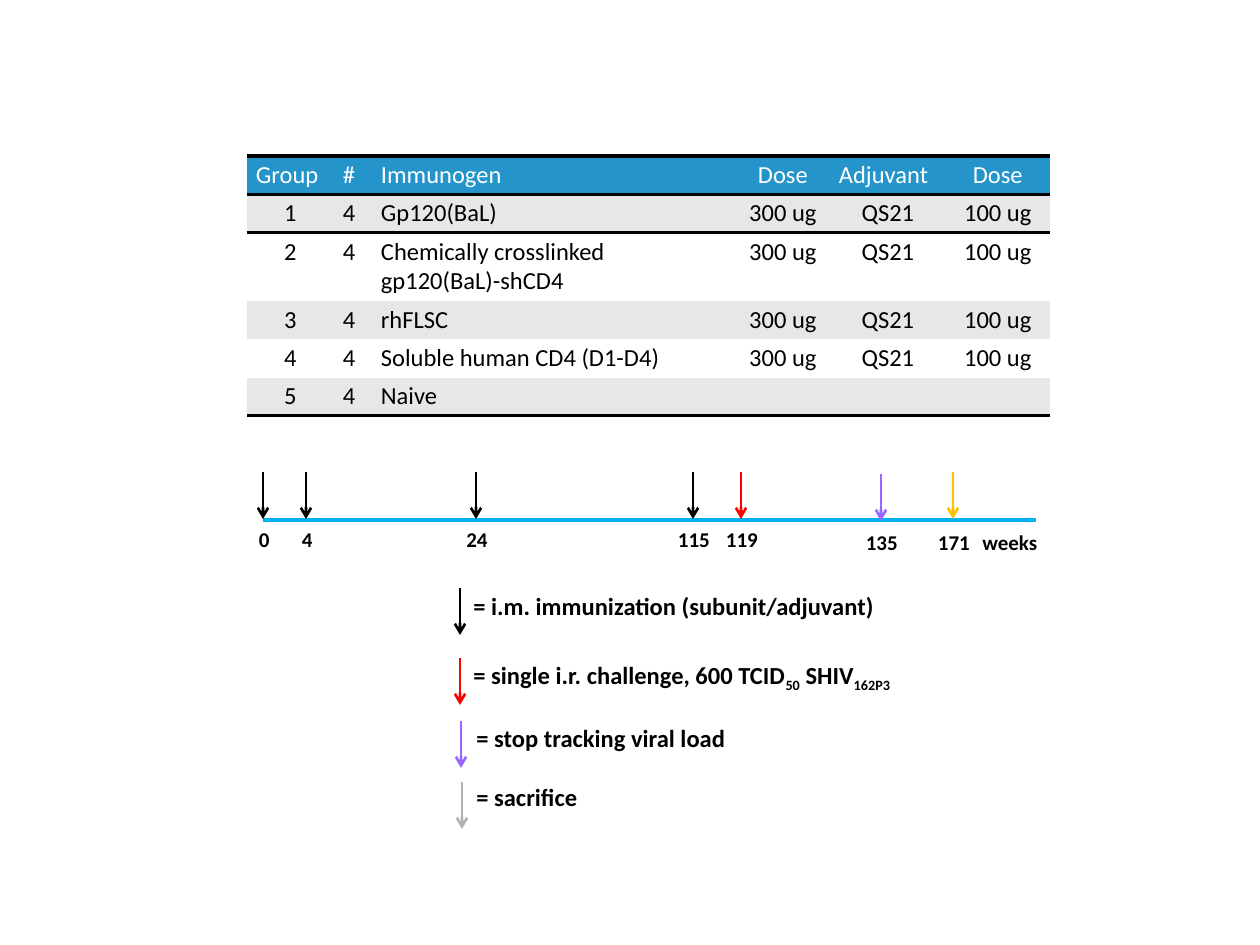
"""Build a slide with a study group table, an immunization timeline and its legend."""
import lxml.etree
import pptx
import pptx.dml.color
import pptx.enum.shapes
import pptx.enum.text
import pptx.oxml.ns
import pptx.util

COLORS = {
    "black": "000000", "white": "FFFFFF", "header": "2494CA", "band": "E7E7E7",
    "axis": "00B0F0", "red": "FF0000", "purple": "9966FF", "gold": "FFC000", "gray": "B2B2B2",
}
FONT = "Calibri"
SLIDE_SIZE = (1260, 945)

TABLE_ROWS = [
    ("Group", "#", "Immunogen", "Dose", "Adjuvant", "Dose"),
    ("1", "4", "Gp120(BaL)", "300 ug", "QS21", "100 ug"),
    ("2", "4", "Chemically crosslinked gp120(BaL)-shCD4", "300 ug", "QS21", "100 ug"),
    ("3", "4", "rhFLSC", "300 ug", "QS21", "100 ug"),
    ("4", "4", "Soluble human CD4 (D1-D4)", "300 ug", "QS21", "100 ug"),
    ("5", "4", "Naive", "", "", ""),
]
TABLE_ORIGIN = (247, 156)
COLUMN_WIDTHS = [87, 38, 364, 94, 116, 104]
ROW_HEIGHTS = [38, 38, 68, 38, 38, 38]
HEADER_ALIGNMENT, BODY_ALIGNMENT = "lllclc", "cllccc"
CELL_MARGINS = {"margin_left": 9, "margin_right": 9, "margin_top": 4, "margin_bottom": 5}

AXIS = (263, 1036, 520)
ARROW_LENGTH = 47
EVENTS = [
    ("0", 263, 472, 520, "black"),
    ("4", 306, 472, 520, "black"),
    ("24", 476, 472, 520, "black"),
    ("115", 693, 472, 520, "black"),
    ("119", 741, 472, 520, "red"),
    ("135", 881, 474, 523, "purple"),
    ("171", 953, 472, 523, "gold"),
]
UNIT_LABEL = ("weeks", 970, 523, 81)
LEGEND = [
    (["= i.m. immunization (subunit/adjuvant)"], "black", 460, 588, 461, 585, 442),
    (["= single i.r. challenge, 600 TCID", "50", " SHIV", "162P3"], "red", 460, 658, 461, 654, 454),
    (["= stop tracking viral load"], "purple", 461, 721, 464, 717, 276),
    (["= sacrifice"], "gray", 462, 782, 464, 776, 127),
]


def px(length):
    return pptx.util.Emu(round(length * 914400 / 126))


def rgb(name):
    return pptx.dml.color.RGBColor.from_string(COLORS[name])


def set_attributes(target, values):
    for name, value in values.items():
        setattr(target, name, value)


def add_element(parent, tag, **attributes):
    return lxml.etree.SubElement(parent, pptx.oxml.ns.qn(tag), attributes)


def format_run(run, size, color, bold):
    set_attributes(run.font, {"name": FONT, "size": pptx.util.Pt(size), "bold": bold})
    run.font.color.rgb = rgb(color)


def add_line(shapes, start, end, color, width, arrow=False):
    connector = shapes.add_connector(
        pptx.enum.shapes.MSO_CONNECTOR.STRAIGHT, *map(px, start + end))
    connector.line.color.rgb = rgb(color)
    connector.line.width = pptx.util.Pt(width)
    if arrow:
        add_element(connector.line._get_or_add_ln(), "a:tailEnd", type="arrow")
    add_element(connector._element.spPr, "a:effectLst")


def add_arrow(shapes, x, top, color):
    add_line(shapes, (x, top), (x, top + ARROW_LENGTH), color, 1.5, True)


def add_label(shapes, parts, left, top, width, height, size):
    shape = shapes.add_textbox(*map(px, (left, top, width, height)))
    set_attributes(shape.text_frame, {
        "word_wrap": False,
        "auto_size": pptx.enum.text.MSO_AUTO_SIZE.SHAPE_TO_FIT_TEXT,
    })
    for index, part in enumerate(parts):
        run = shape.text_frame.paragraphs[0].add_run()
        run.text = part
        format_run(run, size, "black", True)
        if index % 2:
            run.font._element.set("baseline", "-25000")


def add_borders(cell, sides):
    properties = cell._tc.get_or_add_tcPr()
    for index, side in enumerate(sides):
        border = add_element(properties, "a:ln" + side, w="25400")
        fill = add_element(border, "a:solidFill")
        add_element(fill, "a:srgbClr", val=COLORS["black"])
        properties.insert(index, border)


def format_cell(cell, text, row, alignment):
    set_attributes(cell, {name: px(value) for name, value in CELL_MARGINS.items()})
    cell.fill.solid()
    cell.fill.fore_color.rgb = rgb("header" if row == 0 else "band" if row % 2 else "white")
    paragraph = cell.text_frame.paragraphs[0]
    align = pptx.enum.text.PP_ALIGN
    paragraph.alignment = align.CENTER if alignment == "c" else align.LEFT
    if text:
        run = paragraph.add_run()
        run.text = text
        format_run(run, 14, "black" if row else "white", False)
    else:
        add_element(paragraph._p, "a:endParaRPr", sz="1400")
    add_borders(cell, {0: "TB", 1: "T", len(TABLE_ROWS) - 1: "B"}.get(row, ""))


def add_group_table(slide):
    size = (sum(COLUMN_WIDTHS), sum(ROW_HEIGHTS))
    table = slide.shapes.add_table(
        len(TABLE_ROWS), len(COLUMN_WIDTHS), *map(px, TABLE_ORIGIN + size)).table
    set_attributes(table, {"first_row": False, "horz_banding": False})
    style = table._tbl.tblPr.find(pptx.oxml.ns.qn("a:tableStyleId"))
    style.text = "{2D5ABB26-0587-4C30-8999-92F81FD0307C}"
    for column, width in zip(table.columns, COLUMN_WIDTHS):
        column.width = px(width)
    for row, texts in enumerate(TABLE_ROWS):
        table.rows[row].height = px(ROW_HEIGHTS[row])
        alignments = BODY_ALIGNMENT if row else HEADER_ALIGNMENT
        for column, (text, alignment) in enumerate(zip(texts, alignments)):
            format_cell(table.cell(row, column), text, row, alignment)


def add_timeline(shapes):
    left, right, y = AXIS
    add_line(shapes, (left, y), (right, y), "axis", 2.5)
    for week, x, top, label_top, color in EVENTS:
        add_arrow(shapes, x, top, color)
        width = 26 + 11 * len(week)
        add_label(shapes, [week], x + 2 - width / 2, label_top, width, 38, 12)
    text, left, top, width = UNIT_LABEL
    add_label(shapes, [text], left, top, width, 38, 12)


def add_legend(shapes):
    for parts, color, x, top, text_left, text_top, width in LEGEND:
        add_arrow(shapes, x, top, color)
        add_label(shapes, parts, text_left, text_top, width, 43, 14)


def main():
    presentation = pptx.Presentation()
    presentation.slide_width, presentation.slide_height = map(px, SLIDE_SIZE)
    slide = presentation.slides.add_slide(presentation.slide_layouts[6])
    shapes = slide.shapes.add_group_shape().shapes
    add_timeline(shapes)
    add_legend(shapes)
    add_group_table(slide)
    presentation.save("out.pptx")


if __name__ == "__main__":
    main()
